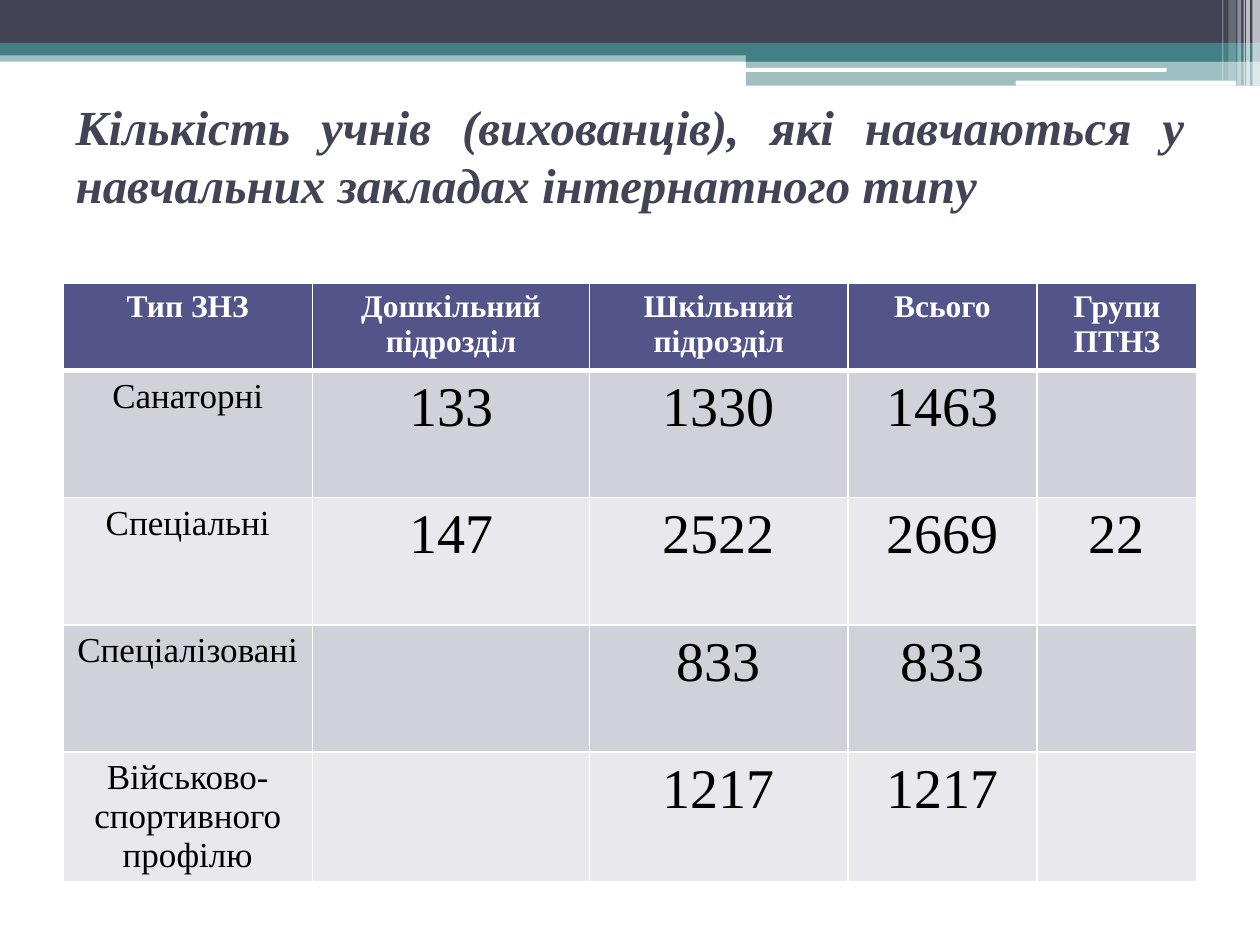
from lxml.etree import SubElement
from pptx import Presentation
from pptx.dml.color import RGBColor
from pptx.enum.shapes import MSO_SHAPE
from pptx.enum.text import MSO_ANCHOR, PP_ALIGN
from pptx.oxml.ns import qn
from pptx.util import Inches, Pt

THEME = {
    "font": "Times New Roman",
    "dark": "424456", "teal": "438086", "white": "FFFFFF", "black": "000000",
    "head": "53548A", "bands": ["D1D1DA", "E9E9ED"],
    "title_size": 28, "head_size": 18, "label_size": 20, "value_size": 32,
}


def paint(fill, color, alpha=100):
    """Fill with a solid colour at the given opacity in percent."""
    fill.solid()
    fill.fore_color.rgb = RGBColor.from_string(color)
    if alpha < 100:
        node = fill._xPr.find(qn("a:solidFill"))[0]
        SubElement(node, qn("a:alpha"), val=str(alpha * 1000))


def edge(cell, side, width):
    """Draw one white cell border: side is L, R, T or B."""
    line = SubElement(cell._tc.get_or_add_tcPr(), qn("a:ln" + side), w=str(Pt(width)))
    solid = SubElement(line, qn("a:solidFill"))
    SubElement(solid, qn("a:srgbClr"), val=THEME["white"])


deck = Presentation()
deck.slide_width, deck.slide_height = Inches(10), Inches(7.5)
slide = deck.slides.add_slide(deck.slide_layouts[5])

# Top banner: left, top, width, height, colour, opacity
RECT, ROUND = MSO_SHAPE.RECTANGLE, MSO_SHAPE.ROUNDED_RECTANGLE
bars = [
    (RECT, 0, 0.4, 10, 0.09, "teal", 50),
    (RECT, 0, 0, 10, 0.34, "dark", 100),
    (RECT, 0, 0.34, 10, 0.1, "teal", 100),
    (RECT, 5.92, 0.39, 4.08, 0.1, "teal", 100),
    (RECT, 5.92, 0.48, 4.08, 0.2, "teal", 50),
    (ROUND, 5.91, 0.54, 3.35, 0.03, "white", 100),
    (ROUND, 8.06, 0.64, 1.75, 0.04, "white", 100),
]
stripes = [
    (9.94, 0.06, 0.68, 65), (9.89, 0.03, 0.68, 65), (9.87, 0.01, 0.68, 60),
    (9.82, 0.03, 0.68, 40), (9.75, 0.06, 0.64, 20), (9.7, 0.01, 0.64, 30),
]
bars += [(RECT, x, 0, w, h, "white", alpha) for x, w, h, alpha in stripes]
for kind, x, y, w, h, color, alpha in bars:
    bar = slide.shapes.add_shape(kind, Inches(x), Inches(y), Inches(w), Inches(h))
    bar.shadow.inherit = False
    bar.line.fill.background()
    paint(bar.fill, THEME[color], alpha)

title = slide.shapes.title
title.left, title.top = Inches(0.5), Inches(0.68)
title.width, title.height = Inches(9), Inches(1.1)
frame = title.text_frame
frame.text = "Кількість учнів (вихованців), які навчаються у навчальних закладах інтернатного типу"
frame.word_wrap = True
frame.vertical_anchor = MSO_ANCHOR.MIDDLE
para = frame.paragraphs[0]
para.alignment = PP_ALIGN.JUSTIFY
para.font.name, para.font.size = THEME["font"], Pt(THEME["title_size"])
para.font.bold = para.font.italic = True
para.font.color.rgb = RGBColor.from_string(THEME["dark"])

data = [
    ["Тип ЗНЗ", "Дошкільний підрозділ", "Шкільний підрозділ", "Всього", "Групи ПТНЗ"],
    ["Санаторні", "133", "1330", "1463", ""],
    ["Спеціальні", "147", "2522", "2669", "22"],
    ["Спеціалізовані", "", "833", "833", ""],
    ["Військово-спортивного профілю", "", "1217", "1217", ""],
]
widths = [1.98, 2.2, 2.05, 1.5, 1.27]
heights = [0.69] + [1.01] * 4
table = slide.shapes.add_table(len(data), len(widths), Inches(0.5), Inches(2.25),
                               Inches(sum(widths)), Inches(sum(heights))).table
for col, width in zip(table.columns, widths):
    col.width = Inches(width)
for row, height in zip(table.rows, heights):
    row.height = Inches(height)

for r, texts in enumerate(data):
    for c, text in enumerate(texts):
        cell = table.cell(r, c)
        for side in "LRTB":
            thick = (r, side) in [(0, "B"), (1, "T")]
            edge(cell, side, 3 if thick else 1)
        paint(cell.fill, THEME["bands"][(r - 1) % 2] if r else THEME["head"])
        if not text:
            continue
        cell.text = text
        size = "head_size" if r == 0 else "label_size" if c == 0 else "value_size"
        para = cell.text_frame.paragraphs[0]
        para.alignment = PP_ALIGN.CENTER
        para.font.name, para.font.size = THEME["font"], Pt(THEME[size])
        para.font.bold = r == 0
        para.font.color.rgb = RGBColor.from_string(THEME["black" if r else "white"])

deck.save("out.pptx")
